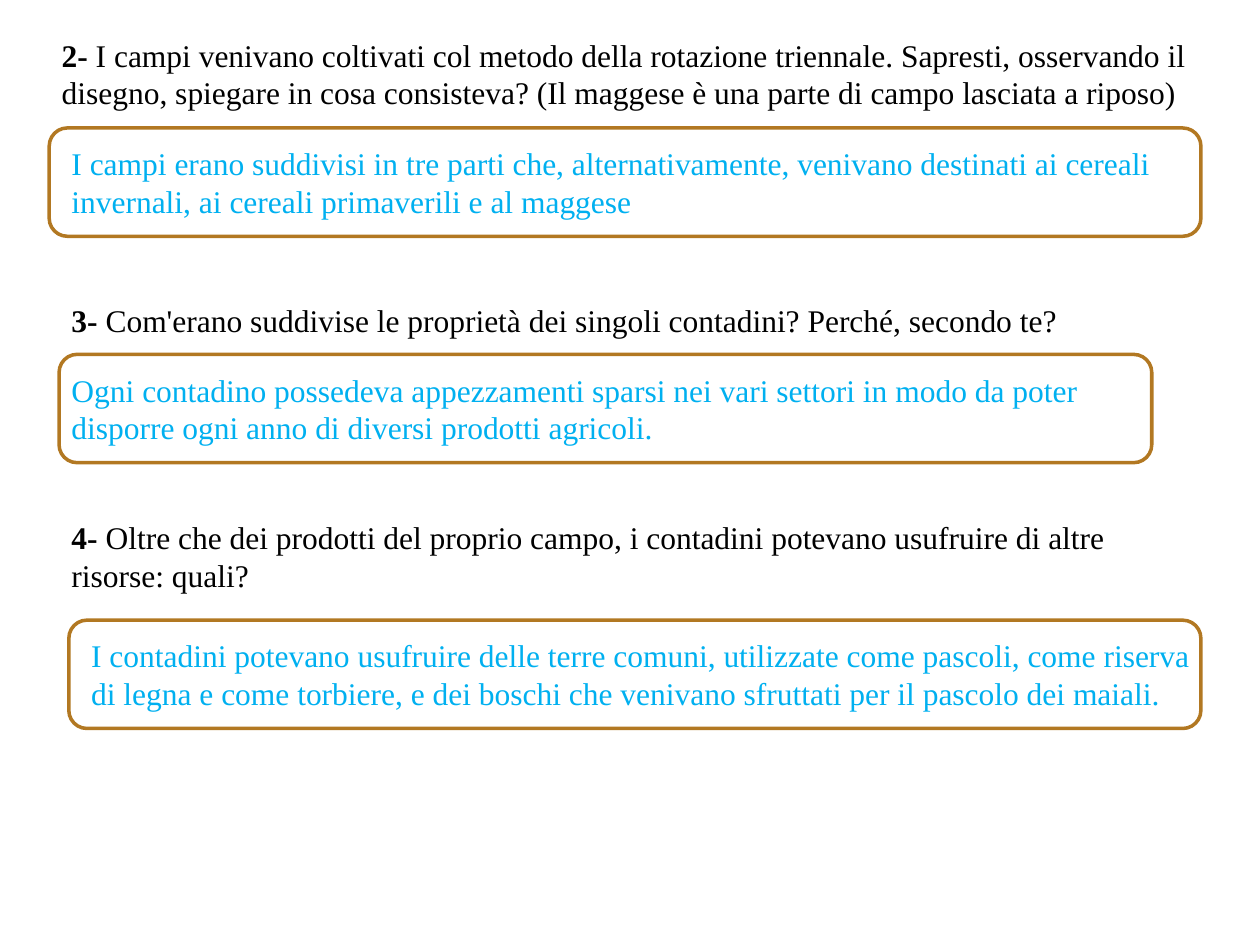
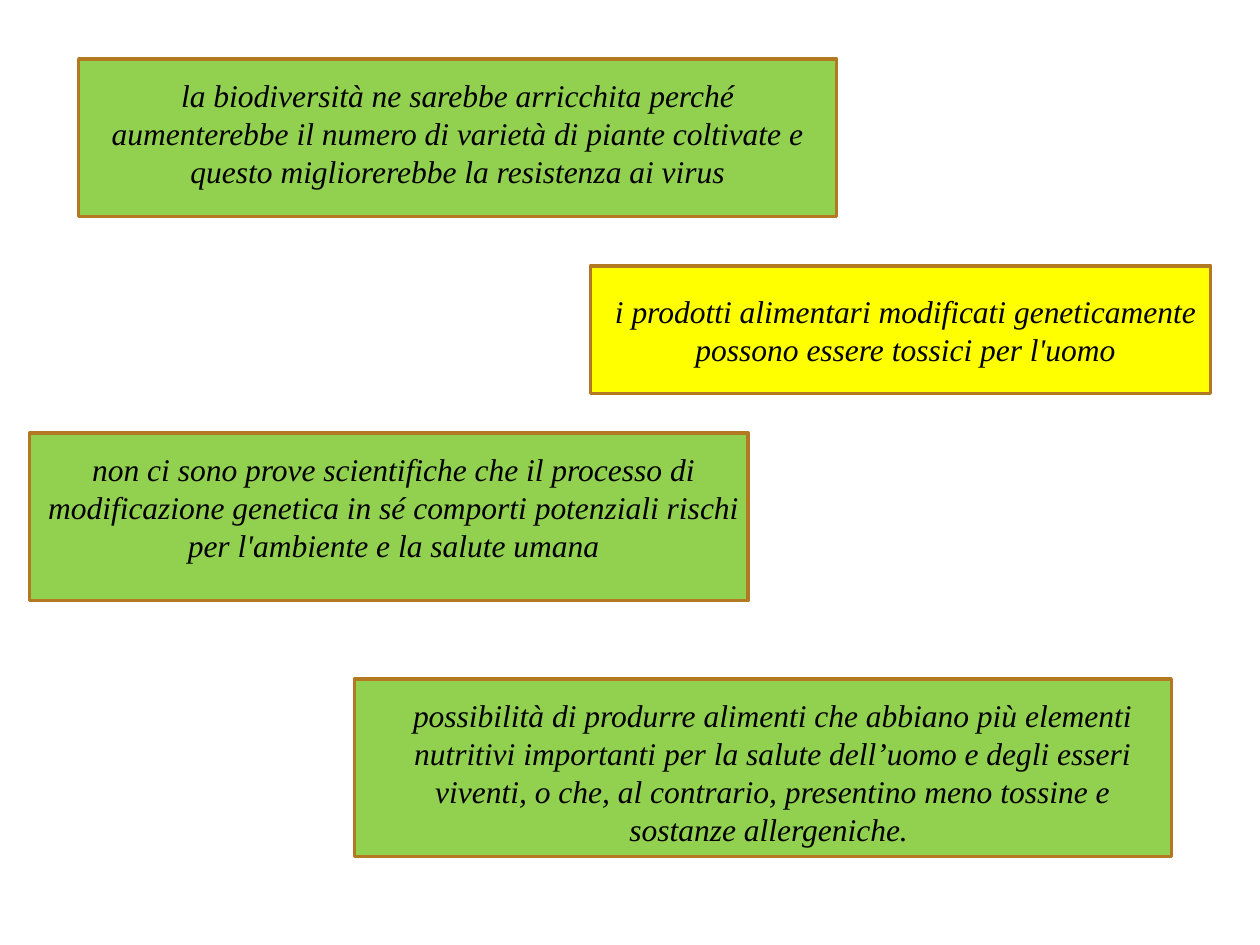
from dataclasses import dataclass
from pptx import Presentation, util as u
from pptx.dml.color import RGBColor
from pptx.enum import shapes, text


@dataclass(frozen=True)
class Theme:
    font: str = "Times New Roman"
    size: int = 18
    rule: int = 2
    ink: str = "000000"
    reply: str = "00B0F0"
    edge: str = "B27822"
    white: str = "FFFFFF"
    green: str = "92D050"
    yellow: str = "FFFF00"


T = Theme()
WIDE, HIGH = u.Inches(10), u.Inches(7.5)
COLS, ROWS = 128, 96


def place(box):
    x, y, w, h = box
    return [u.Emu(round(n)) for n in
            (x * WIDE / COLS, y * HIGH / ROWS, w * WIDE / COLS, h * HIGH / ROWS)]


def inner(box, part):
    return box[0] + part[0], box[1] + part[1], part[2], part[3]


def frame(slide, kind, box, fill):
    shape = slide.shapes.add_shape(kind, *place(box))
    shape.shadow.inherit = False
    shape.fill.solid()
    shape.fill.fore_color.rgb = RGBColor.from_string(fill)
    shape.line.color.rgb = RGBColor.from_string(T.edge)
    shape.line.width = u.Pt(T.rule)


def write(slide, box, lines, color=T.ink, align=text.PP_ALIGN.LEFT,
          anchor=text.MSO_ANCHOR.MIDDLE, wrap=True, italic=False):
    body = slide.shapes.add_textbox(*place(box)).text_frame
    look = {"word_wrap": wrap, "vertical_anchor": anchor,
            "auto_size": text.MSO_AUTO_SIZE.SHAPE_TO_FIT_TEXT}
    for key, value in look.items():
        setattr(body, key, value)
    for i, line in enumerate(lines):
        para = body.add_paragraph() if i else body.paragraphs[0]
        para.alignment = align
        for words, bold in line:
            run = para.add_run()
            run.text = words
            style = {"name": T.font, "size": u.Pt(T.size),
                     "bold": bold, "italic": italic}
            for key, value in style.items():
                setattr(run.font, key, value)
            run.font.color.rgb = RGBColor.from_string(color)


def query(slide, box, mark, words):
    write(slide, box, [[(mark, True), (words, False)]],
          anchor=text.MSO_ANCHOR.TOP)


def answer(slide, box, part, lines):
    frame(slide, shapes.MSO_SHAPE.ROUNDED_RECTANGLE, box, T.white)
    write(slide, inner(box, part), [[(line, False)] for line in lines],
          color=T.reply, align=text.PP_ALIGN.JUSTIFY, wrap=False)


def claim(slide, box, part, fill, words):
    frame(slide, shapes.MSO_SHAPE.RECTANGLE, box, fill)
    write(slide, inner(box, part), [[(words, False)]],
          align=text.PP_ALIGN.CENTER, italic=True)


QUIZ = [
    ((5, 3, 120, 9), "2- ",
     "I campi venivano coltivati col metodo della rotazione triennale. Sapresti, "
     "osservando il disegno, spiegare in cosa consisteva? (Il maggese è una parte "
     "di campo lasciata a riposo)",
     (5, 13, 117, 11), (1, 1, 114.2, 9),
     ["I campi erano suddivisi in tre parti che, alternativamente, venivano "
      "destinati ai cereali ",
      "invernali, ai cereali primaverili e al maggese"]),
    ((6, 30, 114, 5), "3- ",
     "Com'erano suddivise le proprietà dei singoli contadini? Perché, secondo te?",
     (6, 36, 111, 11), (0, 1, 105.9, 9),
     ["Ogni contadino possedeva appezzamenti sparsi nei vari settori in modo da poter",
      "disporre ogni anno di diversi prodotti agricoli."]),
    ((6, 52, 116, 9), "4- ",
     "Oltre che dei prodotti del proprio campo, i contadini potevano usufruire di "
     "altre risorse: quali?",
     (7, 63, 115, 11), (1, 1, 115.5, 9),
     ["I contadini potevano usufruire delle terre comuni, utilizzate come pascoli, "
      "come riserva",
      "di legna e come torbiere, e dei boschi che venivano sfruttati per il pascolo "
      "dei maiali."]),
]

CLAIMS = [
    ((8, 6, 77, 16), (1, 1, 75, 13), T.green,
     "la biodiversità ne sarebbe arricchita perché aumenterebbe il numero di varietà "
     "di piante coltivate e questo migliorerebbe la resistenza ai virus"),
    ((60, 27, 63, 13), (-1, 2, 66, 9), T.yellow,
     "i prodotti alimentari modificati geneticamente possono essere tossici per l'uomo"),
    ((3, 44, 73, 17), (0, 1, 74, 13), T.green,
     "non ci sono prove scientifiche che il processo di modificazione genetica in sé "
     "comporti potenziali rischi per l'ambiente e la salute umana"),
    ((36, 69, 83, 18), (3, 1, 79, 16.8), T.green,
     "possibilità di produrre alimenti che abbiano più elementi nutritivi importanti "
     "per la salute dell’uomo e degli esseri viventi, o che, al contrario, presentino "
     "meno tossine e sostanze allergeniche. "),
]


def quiz(slide):
    for spot, mark, words, box, part, lines in QUIZ:
        query(slide, spot, mark, words)
        answer(slide, box, part, lines)


def debate(slide):
    for item in CLAIMS:
        claim(slide, *item)


def main():
    deck = Presentation()
    deck.slide_width, deck.slide_height = WIDE, HIGH
    for build in (quiz, debate):
        build(deck.slides.add_slide(deck.slide_layouts[6]))
    deck.save("out.pptx")


if __name__ == "__main__":
    main()
